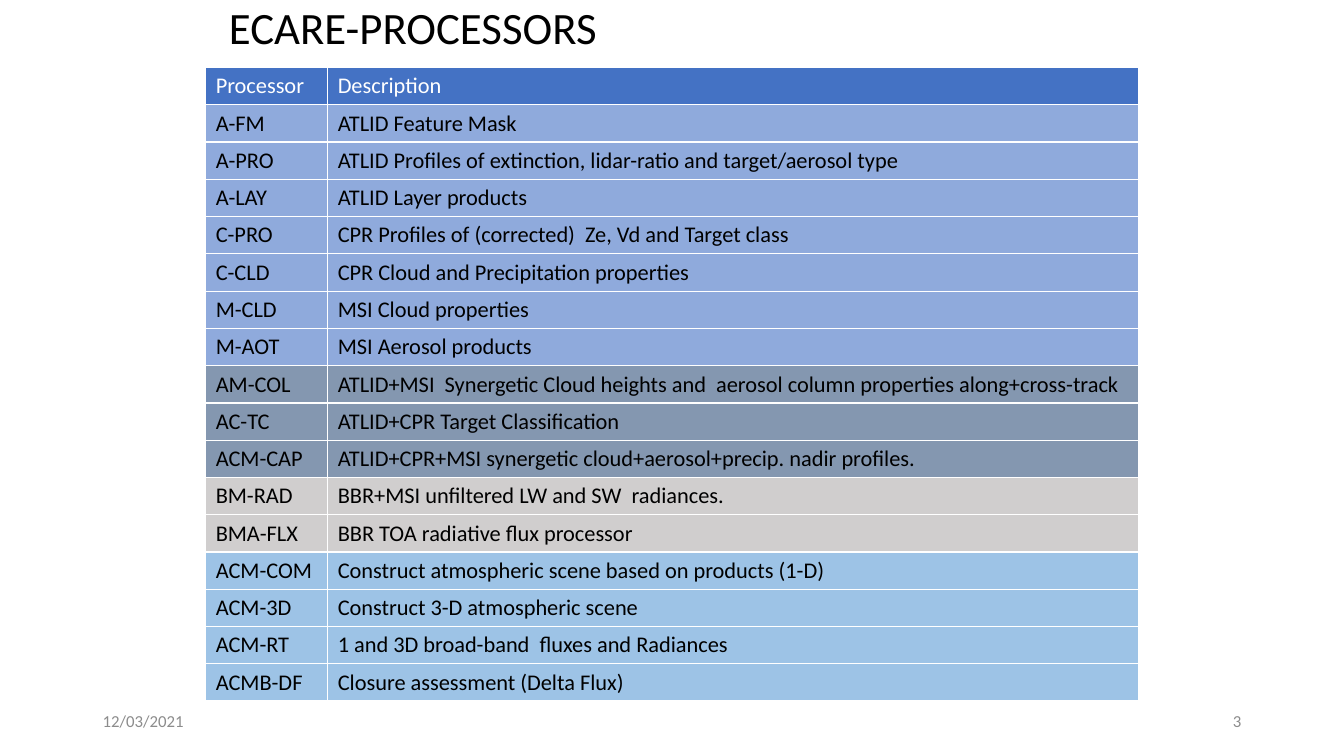
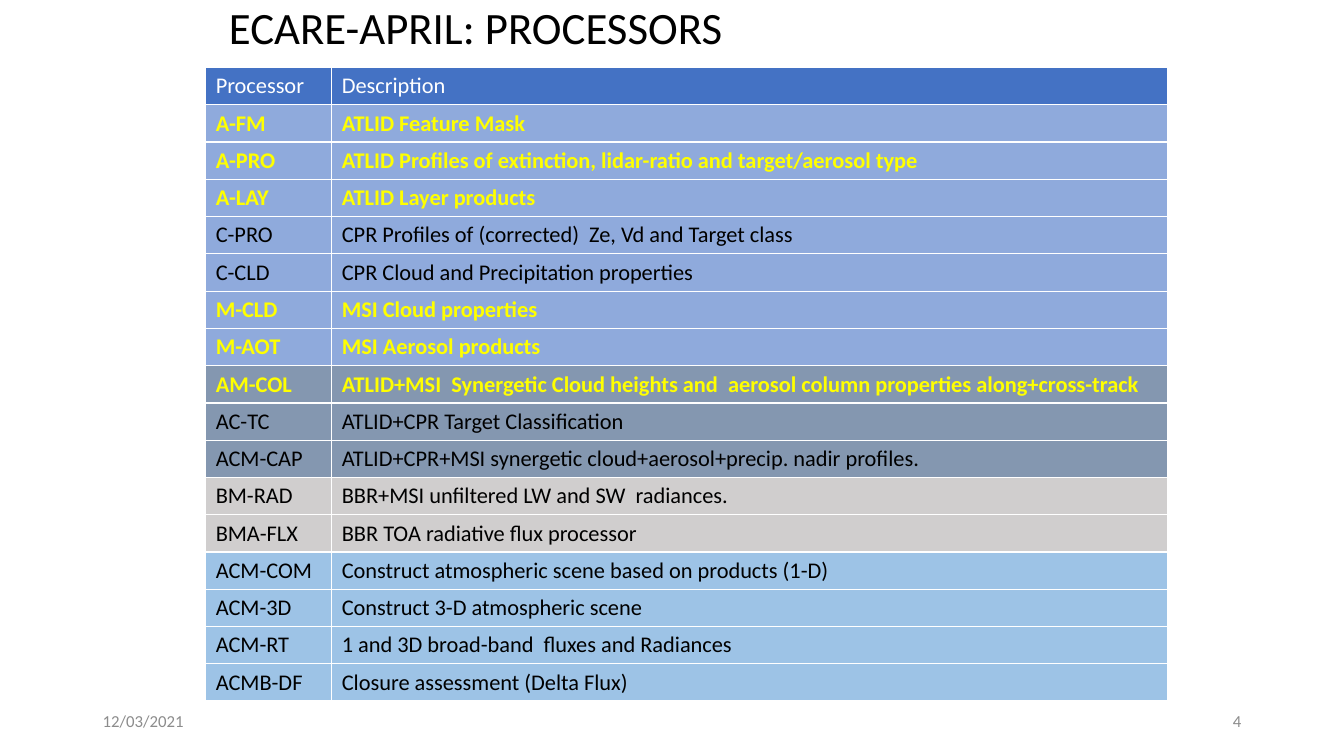
from lxml import etree
from pptx import Presentation
from pptx.dml.color import RGBColor
from pptx.enum.text import MSO_ANCHOR, MSO_AUTO_SIZE, PP_ALIGN
from pptx.oxml.ns import qn
from pptx.util import Inches, Pt

LEFT, RIGHT = PP_ALIGN.LEFT, PP_ALIGN.RIGHT
MIDDLE, FIXED = MSO_ANCHOR.MIDDLE, MSO_AUTO_SIZE.NONE
TITLE_ONLY = 5
WIDE, HIGH = 13.33, 7.5
FONT = "Calibri"
COLORS = {
    "text": "000000", "white": "FFFFFF", "mark": "FFFF00", "foot": "8C8C8C",
    "head": "4472C4", "single": "8FAADC", "synergy": "8497B0",
    "flux": "D0CECE", "scene": "9DC3E6",
}
TABLE_LEFT, TABLE_TOP, ROW = 2.04, 0.67, 0.37
FOOT_TOP, FOOT_WIDE, FOOT_HIGH, MARGIN = 6.95, 3, 0.4, 0.92
DATE = "12/03/2021"

GROUPS = {
    "head": [("Processor", "Description")],
    "single": [
        ("A-FM", "ATLID Feature Mask"),
        ("A-PRO", "ATLID Profiles of extinction, lidar-ratio and target/aerosol type"),
        ("A-LAY", "ATLID Layer products"),
        ("C-PRO", "CPR Profiles of (corrected)  Ze, Vd and Target class"),
        ("C-CLD", "CPR Cloud and Precipitation properties"),
        ("M-CLD", "MSI Cloud properties"),
        ("M-AOT", "MSI Aerosol products"),
    ],
    "synergy": [
        ("AM-COL", "ATLID+MSI  Synergetic Cloud heights and  aerosol column "
                   "properties along+cross-track"),
        ("AC-TC", "ATLID+CPR Target Classification"),
        ("ACM-CAP", "ATLID+CPR+MSI synergetic cloud+aerosol+precip. nadir profiles."),
    ],
    "flux": [
        ("BM-RAD", "BBR+MSI unfiltered LW and SW  radiances."),
        ("BMA-FLX", "BBR TOA radiative flux processor"),
    ],
    "scene": [
        ("ACM-COM", "Construct atmospheric scene based on products (1-D)"),
        ("ACM-3D", "Construct 3-D atmospheric scene"),
        ("ACM-RT", "1 and 3D broad-band  fluxes and Radiances"),
        ("ACMB-DF", "Closure assessment (Delta Flux)"),
    ],
}
# Title, page number, column widths, highlighted processors
SLIDES = [
    ("ECARE-PROCESSORS", 3, (1.21, 8.04), ()),
    ("ECARE-APRIL: PROCESSORS", 4, (1.25, 8.29),
     ("A-FM", "A-PRO", "A-LAY", "M-CLD", "M-AOT", "AM-COL")),
]


def rgb(name):
    return RGBColor.from_string(COLORS[name])


def write(frame, text, size, color, bold=False, align=LEFT):
    frame.text = text
    para = frame.paragraphs[0]
    para.alignment = align
    font = para.runs[0].font
    font.name, font.size, font.bold = FONT, Pt(size), bold
    font.color.rgb = rgb(color)


def add_title(slide, text, box):
    title = slide.shapes.title
    title.left, title.top, title.width, title.height = map(Inches, box)
    frame = title.text_frame
    write(frame, text, 32, "text")
    frame.auto_size, frame.vertical_anchor = FIXED, MIDDLE
    frame.paragraphs[0].line_spacing = 0.9


def add_foot(slide, text, left, align):
    box = slide.shapes.add_textbox(
        *map(Inches, (left, FOOT_TOP, FOOT_WIDE, FOOT_HIGH)))
    frame = box.text_frame
    frame.word_wrap, frame.vertical_anchor = True, MIDDLE
    write(frame, text, 12, "foot", align=align)


def add_edges(cell):
    """Draw a thin white line on all four sides of the cell."""
    props = cell._tc.get_or_add_tcPr()
    for side in "LRTB":
        line = etree.SubElement(props, qn(f"a:ln{side}"), w=str(Pt(1)))
        fill = etree.SubElement(line, qn("a:solidFill"))
        etree.SubElement(fill, qn("a:srgbClr"), val=COLORS["white"])


def add_grid(slide, left, top, widths, marked):
    rows = [(group, row) for group, part in GROUPS.items() for row in part]
    size = sum(widths), ROW * len(rows)
    table = slide.shapes.add_table(
        len(rows), len(widths), *map(Inches, (left, top, *size))).table
    table.horz_banding = False
    for col, width in zip(table.columns, widths):
        col.width = Inches(width)
    for line, (group, row) in zip(table.rows, rows):
        line.height = Inches(ROW)
        bold = row[0] in marked
        color = "white" if group == "head" else "mark" if bold else "text"
        for cell, text in zip(line.cells, row):
            write(cell.text_frame, text, 16, color, bold)
            add_edges(cell)
            cell.fill.solid()
            cell.fill.fore_color.rgb = rgb(group)


def add_page(deck, title, number, widths, marked):
    slide = deck.slides.add_slide(deck.slide_layouts[TITLE_ONLY])
    add_title(slide, title, (2.17, -0.33, 9, 1.25))
    add_foot(slide, str(number), WIDE - MARGIN - FOOT_WIDE, RIGHT)
    add_grid(slide, TABLE_LEFT, TABLE_TOP, widths, marked)
    add_foot(slide, DATE, MARGIN, LEFT)


def main():
    deck = Presentation()
    deck.slide_width, deck.slide_height = Inches(WIDE), Inches(HIGH)
    for page in SLIDES:
        add_page(deck, *page)
    deck.save("out.pptx")


if __name__ == "__main__":
    main()
